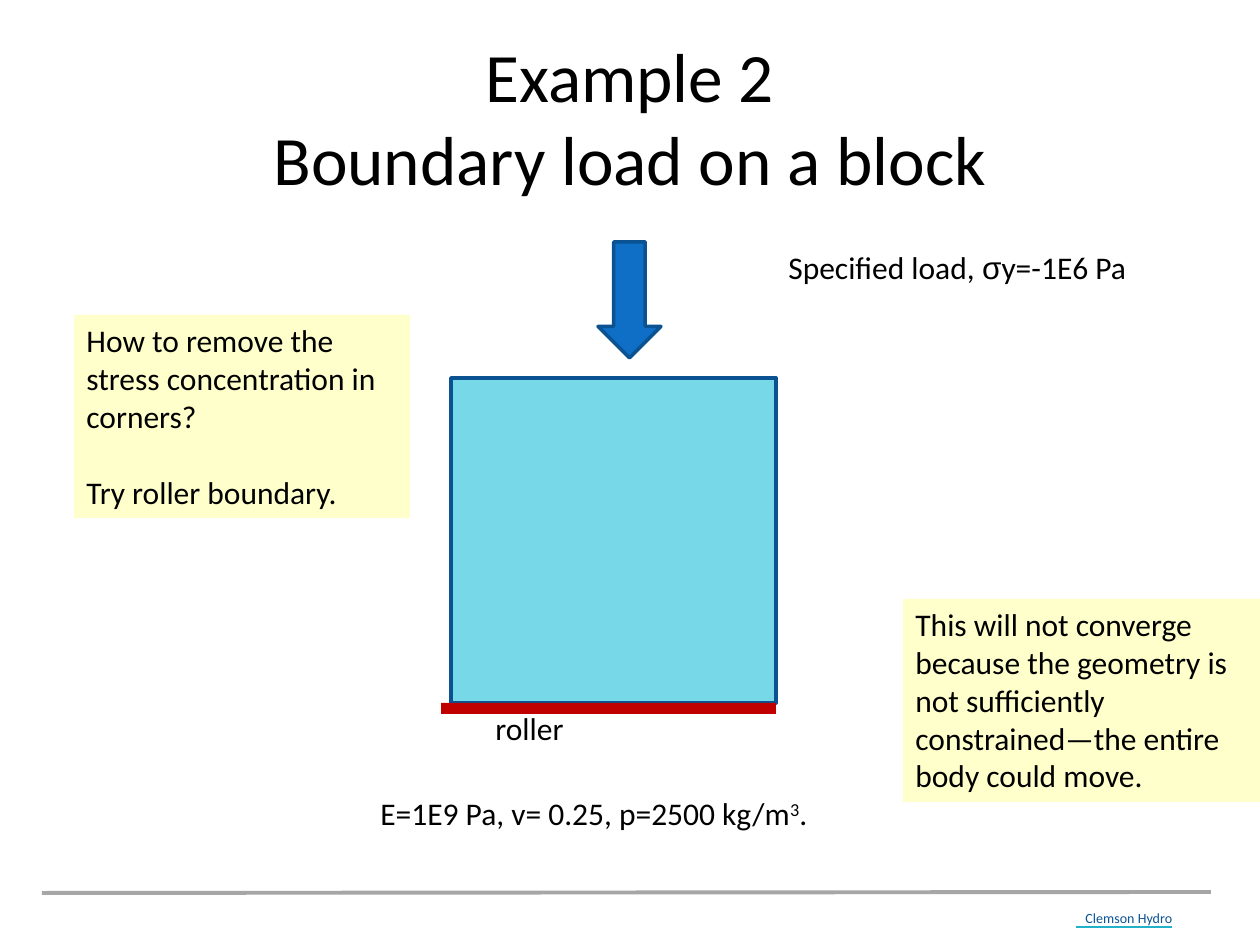
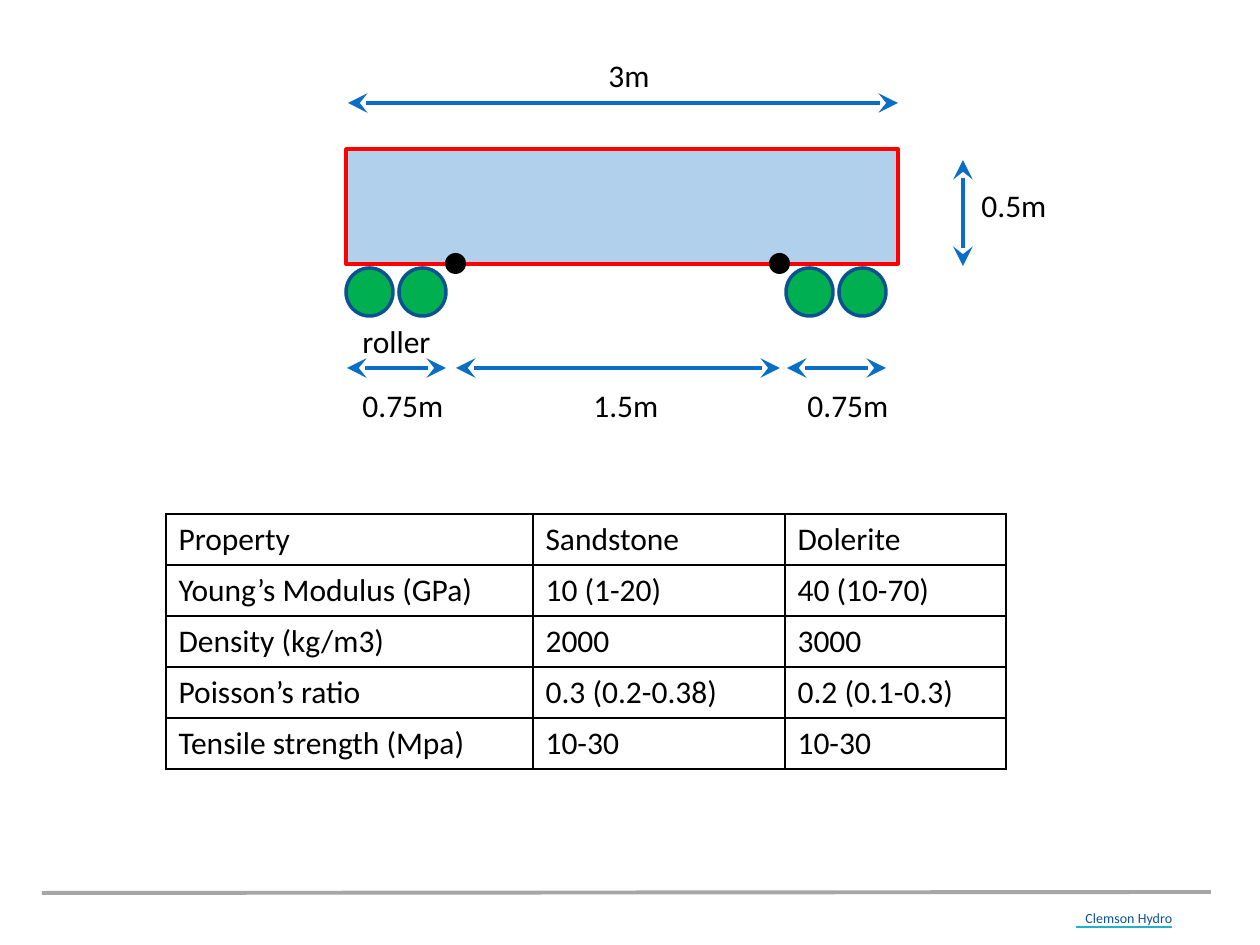
from dataclasses import dataclass

from lxml import etree
from pptx import Presentation, util as u
from pptx.dml.color import RGBColor
from pptx.enum import shapes as es, text as et
from pptx.oxml import ns


@dataclass(frozen=True)
class Theme:
    font: str = "Calibri"
    greek: str = "Arial"
    title: float = 39.6
    body: float = 18
    small: float = 8
    ink: str = "000000"
    rule: str = "A6A6A6"
    brand: str = "0B5395"
    under: str = "21B2C9"
    blue: str = "0F6FC6"
    edge: str = "0B5292"
    arrow: str = "0A6DC6"
    block: str = "77D9E8"
    base: str = "C00000"
    note: str = "FFFFCC"
    red: str = "FF0000"
    wheel: str = "00B050"


T = Theme()
KIND = es.MSO_SHAPE


def px(n):
    """126 px make one inch."""
    return u.Emu(round(n * 914400 / 126))


def rgb(code):
    return RGBColor.from_string(code)


def sub(node, tag, **attrs):
    return etree.SubElement(node, ns.qn(tag), attrs)


# Basic parts

def style(para, size=T.body, color=T.ink):
    para.font.name = T.font
    para.font.size = u.Pt(size)
    para.font.color.rgb = rgb(color)


def shape(sld, kind, x, y, w, h, fill, edge=None):
    shp = sld.shapes.add_shape(kind, px(x), px(y), px(w), px(h))
    shp.shadow.inherit = False
    shp.fill.solid()
    shp.fill.fore_color.rgb = rgb(fill)
    if edge:
        shp.line.color.rgb = rgb(edge)
        shp.line.width = u.Pt(2)
    else:
        shp.line.fill.background()
    return shp


def label(sld, words, x, y, w=116, h=50):
    box = sld.shapes.add_textbox(px(x), px(y), px(w), px(h))
    frame = box.text_frame
    frame.word_wrap = True
    frame.text = words
    style(frame.paragraphs[0])
    return frame.paragraphs[0]


def line(sld, x1, y1, x2, y2, color, width=2.25, heads=False):
    con = sld.shapes.add_connector(
        es.MSO_CONNECTOR.STRAIGHT, px(x1), px(y1), px(x2), px(y2))
    con.line.color.rgb = rgb(color)
    con.line.width = u.Pt(width)
    props = con.element.spPr
    if heads:
        for tag in ("a:headEnd", "a:tailEnd"):
            sub(props.get_or_add_ln(), tag, type="stealth", w="lg", len="lg")
    sub(props, "a:effectLst")


def note(sld, parts, x, y, w, h):
    shp = shape(sld, KIND.RECTANGLE, x, y, w, h, T.note)
    frame = shp.text_frame
    frame.word_wrap = True
    frame.vertical_anchor = et.MSO_ANCHOR.TOP
    frame.text = "\n".join(parts)
    for i, para in enumerate(frame.paragraphs):
        para.alignment = et.PP_ALIGN.LEFT
        if i:
            para.space_before = u.Pt(22)
        style(para)


# Shared rule and footer

def footer(sld):
    line(sld, 42, 893, 1211, 892, T.rule)
    para = label(sld, "Clemson Hydro", 1071, 903, 116, 30)
    para.alignment = et.PP_ALIGN.CENTER
    style(para, T.small, T.brand)
    line(sld, 1076, 927, 1172, 927, T.under, 0.75)


# Slide 1 regions

def heading(sld, words):
    ttl = sld.shapes.title
    ttl.left, ttl.top, ttl.width, ttl.height = map(px, (63, 38, 1134, 157))
    frame = ttl.text_frame
    frame.text = words
    frame.auto_size = et.MSO_AUTO_SIZE.NONE
    frame.vertical_anchor = et.MSO_ANCHOR.MIDDLE
    frame.paragraphs[0].alignment = et.PP_ALIGN.CENTER
    style(frame.paragraphs[0], T.title)


def block(sld, x, y, side):
    """Loaded block standing on its roller base."""
    shape(sld, KIND.RECTANGLE, x, y, side, side, T.block, T.edge)
    shape(sld, KIND.RECTANGLE, x - 10, y + side, side + 10, 11, T.base)
    shape(sld, KIND.DOWN_ARROW, x + 147, y - 136, 63, 116, T.blue, T.edge)
    label(sld, "roller", x + 32, y + side, 210)

    para = label(sld, "E=1E9 Pa, v= 0.25, p=2500 kg/m", x - 83, y + 410, 693)
    cube = para.add_run()
    cube.text = "3"
    cube.font._element.set("baseline", "30000")
    para.add_run().text = "."

    para = label(sld, "Specified load, ", x + side, y - 136, 431)
    sigma = para.add_run()
    sigma.text = "σ"
    sigma.font.name = T.greek
    para.add_run().text = "y=-1E6 Pa"


def load_slide(prs):
    sld = prs.slides.add_slide(prs.slide_layouts[5])
    footer(sld)
    heading(sld, "Example 2\vBoundary load on a block")
    block(sld, 451, 378, 325)
    note(sld, ["How to remove the stress concentration in corners?",
               "Try roller boundary."], 74, 315, 336, 203)
    note(sld, ["This will not converge because the geometry is not "
               "sufficiently constrained—the entire body could move."],
         903, 599, 357, 203)


# Slide 2 regions

def beam(sld, x, y, w, h):
    """Beam on four rollers with its dimensions."""
    bar = shape(sld, KIND.RECTANGLE, x, y, w, h, T.blue, T.red)
    tint = bar.element.spPr.find(".//" + ns.qn("a:srgbClr"))
    sub(tint, "a:alpha", val="32000")
    for pair in (0, 440):
        for step in (0, 53):
            shape(sld, KIND.OVAL, x + pair + step, y + h + 4, 47, 48,
                  T.wheel, T.edge)
    for dot in (99, 423):
        shape(sld, KIND.OVAL, x + dot, y + h - 11, 21, 21, T.ink)

    line(sld, x + 2, y - 46, x + w, y - 46, T.arrow, heads=True)
    label(sld, "3m", x + 250, y - 99)
    line(sld, x + 617, y + 11, x + 617, y + 117, T.arrow, heads=True)
    label(sld, "0.5m", x + 623, y + 31)

    label(sld, "roller", x + 4, y + 167)
    spans = (("0.75m", 1, 100, 4), ("1.5m", 110, 434, 235),
             ("0.75m", 441, 540, 449))
    for words, start, end, left in spans:
        line(sld, x + start, y + 219, x + end, y + 219, T.arrow, heads=True)
        label(sld, words, x + left, y + 231)


def border(cell):
    props = cell._tc.get_or_add_tcPr()
    for i, side in enumerate("LRTB"):
        edge = etree.Element(ns.qn("a:ln" + side), w=str(u.Pt(1)))
        sub(sub(edge, "a:solidFill"), "a:srgbClr", val=T.ink)
        props.insert(i, edge)


def props_table(sld, x, y, rows, cols, high):
    shp = sld.shapes.add_table(len(rows), len(cols), px(x), px(y),
                               px(sum(cols)), px(high * len(rows)))
    tbl = shp.table
    tbl.first_row = tbl.horz_banding = False
    for col, wide in zip(tbl.columns, cols):
        col.width = px(wide)
    for row, words in zip(tbl.rows, rows):
        row.height = px(high)
        for cell, word in zip(row.cells, words):
            cell.text = word
            style(cell.text_frame.paragraphs[0])
            cell.fill.background()
            border(cell)


def beam_slide(prs):
    sld = prs.slides.add_slide(prs.slide_layouts[6])
    footer(sld)
    beam(sld, 346, 149, 552, 115)
    props_table(sld, 166, 514, [
        ("Property", "Sandstone", "Dolerite"),
        ("Young’s Modulus (GPa)", "10 (1-20)", "40 (10-70)"),
        ("Density (kg/m3)", "2000", "3000"),
        ("Poisson’s ratio", "0.3 (0.2-0.38)", "0.2 (0.1-0.3)"),
        ("Tensile strength (Mpa)", "10-30", "10-30"),
    ], (367, 252, 221), 51)


def main():
    prs = Presentation()
    prs.slide_width, prs.slide_height = px(1260), px(945)
    load_slide(prs)
    beam_slide(prs)
    prs.save("out.pptx")


if __name__ == "__main__":
    main()
